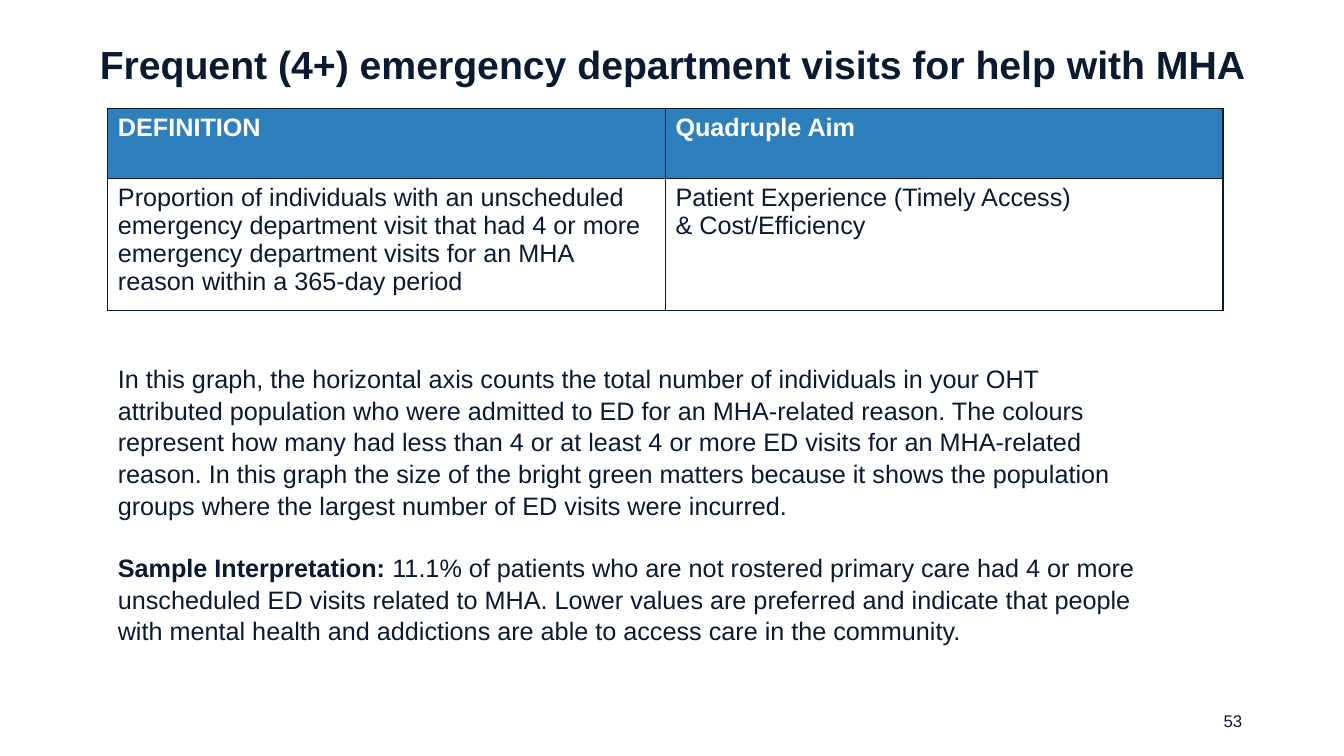
from lxml import etree
from pptx import Presentation
from pptx.dml.color import RGBColor
from pptx.enum.text import MSO_ANCHOR, PP_ALIGN
from pptx.oxml.ns import qn
from pptx.util import Inches, Pt

MIDDLE = MSO_ANCHOR.MIDDLE
CENTER, RIGHT = PP_ALIGN.CENTER, PP_ALIGN.RIGHT
NAVY = RGBColor(0x0A, 0x1A, 0x31)
BLUE = RGBColor(0x2E, 0x80, 0xBC)
WHITE = RGBColor(0xFF, 0xFF, 0xFF)

TITLE = "Frequent (4+) emergency department visits for help with MHA"
ROWS = [
    ("DEFINITION", "Quadruple Aim"),
    ("Proportion of individuals with an unscheduled emergency department visit "
     "that had 4 or more emergency department visits for an MHA reason within a "
     "365-day period",
     "Patient Experience (Timely Access)\n& Cost/Efficiency"),
]
ROW_HEIGHTS = [0.69, 1.31]
COL_WIDTH = 5.53
NOTES = [
    [("In this graph, the horizontal axis counts the total number of individuals "
      "in your OHT attributed population who were admitted to ED for an "
      "MHA-related reason. The colours represent how many had less than 4 or at "
      "least 4 or more ED visits for an MHA-related reason. In this graph the "
      "size of the bright green matters because it shows the population groups "
      "where the largest number of ED visits were incurred.", False)],
    [("Sample Interpretation: ", True),
     ("11.1% of patients who are not rostered primary care had 4 or more "
      "unscheduled ED visits related to MHA. Lower values are preferred and "
      "indicate that people with mental health and addictions are able to access "
      "care in the community.", False)],
]
PAGE = "53"


def style(r, size, color=NAVY, bold=False):
    r.font.name = "Arial"
    r.font.size = Pt(size)
    r.font.bold = bold
    r.font.color.rgb = color


def add_text(slide, left, top, width, height):
    box = slide.shapes.add_textbox(Inches(left), Inches(top), Inches(width), Inches(height))
    box.text_frame.word_wrap = True
    return box.text_frame


def add_borders(cell):
    props = cell._tc.get_or_add_tcPr()
    for i, side in enumerate(("a:lnL", "a:lnR", "a:lnT", "a:lnB")):
        line = etree.Element(qn(side), w=str(Pt(1)))
        fill = etree.SubElement(line, qn("a:solidFill"))
        etree.SubElement(fill, qn("a:srgbClr"), val=str(NAVY))
        props.insert(i, line)


def add_title(slide):
    title = slide.shapes.title
    title.left, title.top = Inches(0.77), Inches(0.24)
    title.width, title.height = Inches(11.8), Inches(0.84)
    tf = title.text_frame
    tf.text = TITLE
    tf.vertical_anchor = MIDDLE
    p = tf.paragraphs[0]
    p.alignment = CENTER
    p.line_spacing = 0.9
    style(p.runs[0], 28, bold=True)


def add_definition_table(slide):
    table = slide.shapes.add_table(
        len(ROWS), len(ROWS[0]), Inches(1.07), Inches(1.08),
        Inches(COL_WIDTH * len(ROWS[0])), Inches(sum(ROW_HEIGHTS))).table
    for col in table.columns:
        col.width = Inches(COL_WIDTH)
    for i, texts in enumerate(ROWS):
        header = i == 0
        table.rows[i].height = Inches(ROW_HEIGHTS[i])
        for j, text in enumerate(texts):
            cell = table.cell(i, j)
            cell.text_frame.text = text
            cell.fill.solid()
            cell.fill.fore_color.rgb = BLUE if header else WHITE
            add_borders(cell)
            for p in cell.text_frame.paragraphs:
                style(p.runs[0], 18, WHITE if header else NAVY, header)


def add_notes(slide):
    tf = add_text(slide, 1.07, 3.54, 10.32, 2.83)
    for i, parts in enumerate(NOTES):
        p = tf.paragraphs[0] if i == 0 else tf.add_paragraph()
        p.line_spacing = 1.05
        if i:
            p.space_before = Pt(21.6)
        for text, bold in parts:
            r = p.add_run()
            r.text = text
            style(r, 18, bold=bold)


def add_page_number(slide):
    tf = add_text(slide, 9.42, 6.95, 3, 0.4)
    tf.text = PAGE
    tf.vertical_anchor = MIDDLE
    tf.paragraphs[0].alignment = RIGHT
    style(tf.paragraphs[0].runs[0], 12)


def main():
    prs = Presentation()
    prs.slide_width, prs.slide_height = Inches(13.33), Inches(7.5)
    slide = prs.slides.add_slide(prs.slide_layouts[5])
    add_title(slide)
    add_definition_table(slide)
    add_notes(slide)
    add_page_number(slide)
    prs.save("out.pptx")


if __name__ == "__main__":
    main()
